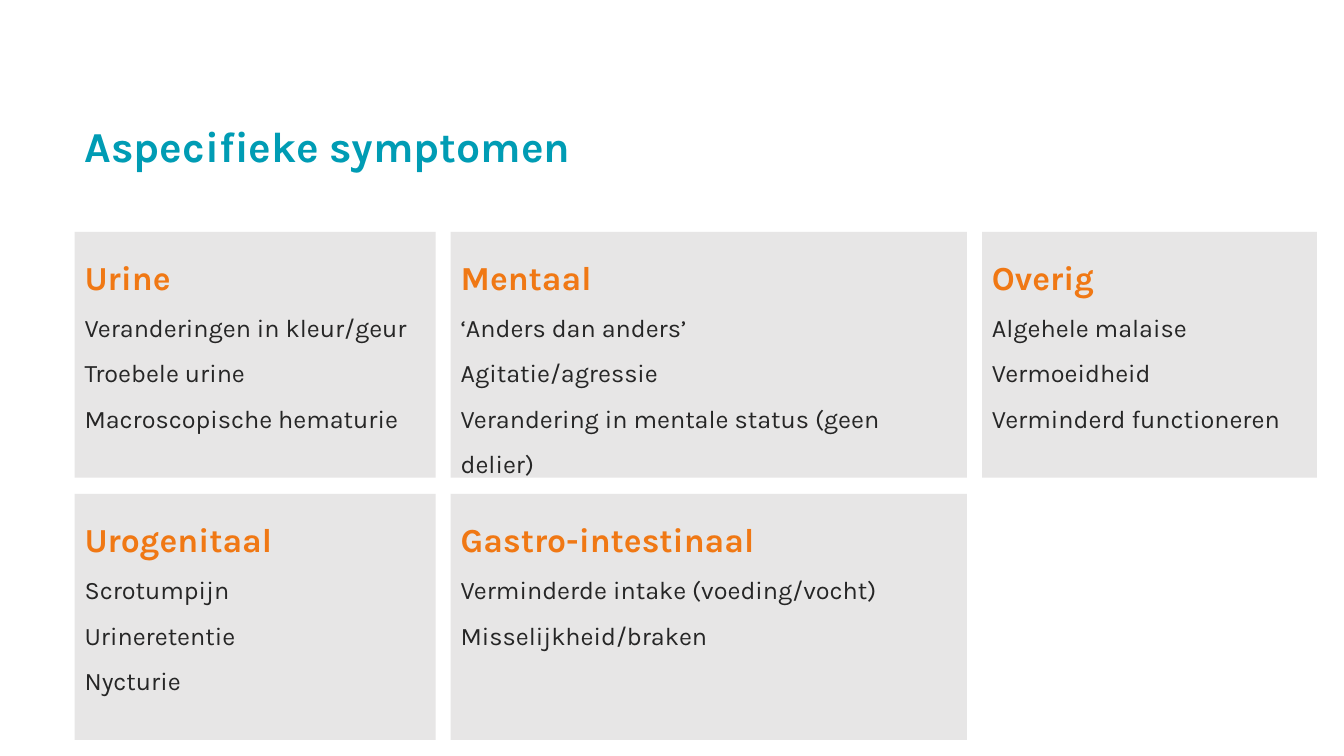
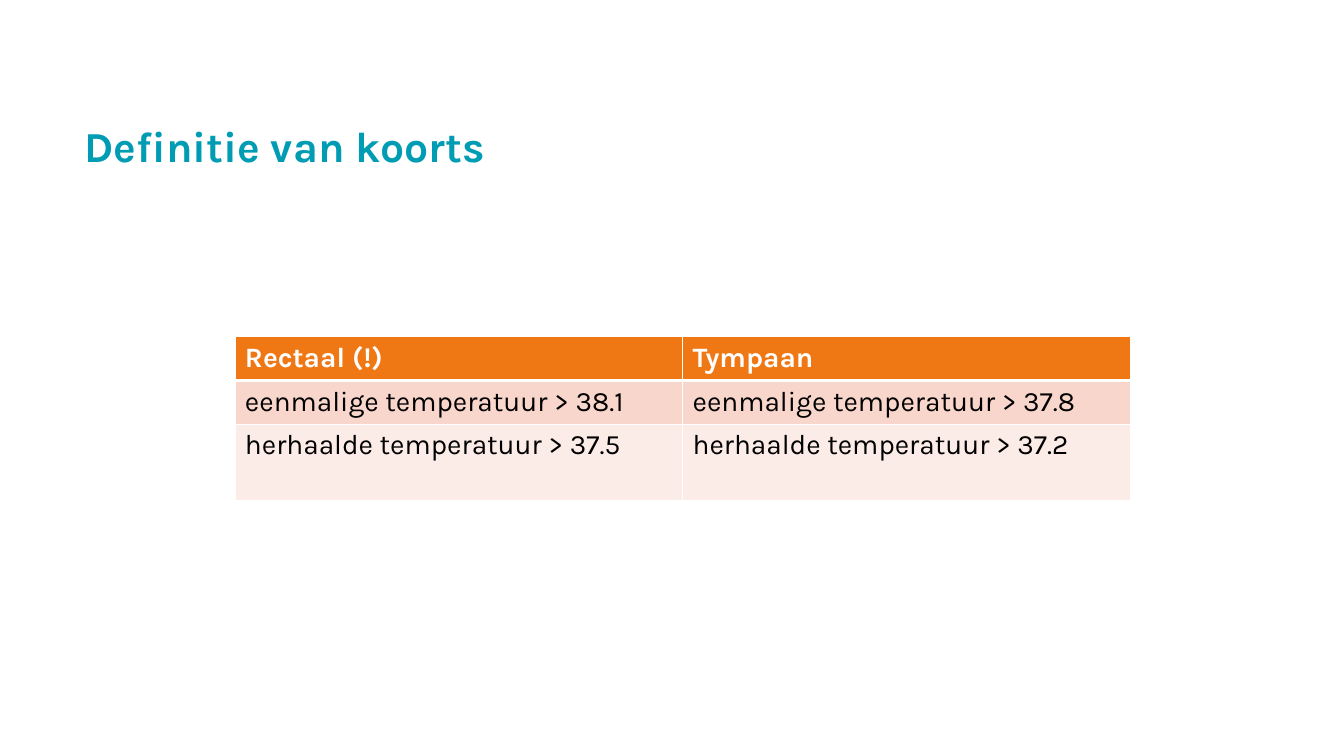
from lxml import etree
from pptx import Presentation
from pptx.dml.color import RGBColor
from pptx.enum.shapes import MSO_SHAPE
from pptx.enum.text import MSO_ANCHOR, PP_ALIGN
from pptx.oxml.ns import qn
from pptx.util import Inches, Pt

RECT = MSO_SHAPE.RECTANGLE
TOP = MSO_ANCHOR.TOP
LEFT = PP_ALIGN.LEFT

FONT = "Karla"
COLORS = {
    "title": "009CB4",
    "accent": "F07814",
    "body": "262626",
    "card": "E7E6E6",
    "band1": "F9D6CC",
    "band2": "FCECE7",
    "white": "FFFFFF",
    "black": "000000",
}
# Text styles: font attributes and colour
STYLES = {
    "title": ({"name": FONT, "size": Pt(30.5), "bold": True}, "title"),
    "heading": ({"name": FONT, "size": Pt(24), "bold": True}, "accent"),
    "item": ({"name": FONT, "size": Pt(18), "bold": False}, "body"),
    "header_cell": ({"name": FONT, "size": Pt(20), "bold": True}, "white"),
    "cell": ({"name": FONT, "size": Pt(20), "bold": False}, "black"),
}
MARGIN = 0.74


def write(tf, lines, spacing=1.0):
    """Fill a text frame with (text, style) paragraphs."""
    tf.word_wrap = True
    tf.vertical_anchor = TOP
    for i, (text, style) in enumerate(lines):
        p = tf.paragraphs[0] if i == 0 else tf.add_paragraph()
        p.alignment = LEFT
        p.line_spacing = spacing
        r = p.add_run()
        r.text = text
        attrs, color = STYLES[style]
        for name, value in attrs.items():
            setattr(r.font, name, value)
        r.font.color.rgb = RGBColor.from_string(COLORS[color])


def titled_slide(prs, title):
    """Add a blank slide with the shared title."""
    s = prs.slides.add_slide(prs.slide_layouts[6])
    box = s.shapes.add_textbox(Inches(MARGIN), Inches(1.2), Inches(12.33), Inches(1.45))
    write(box.text_frame, [(title, "title")], 0.9)
    return s


prs = Presentation()
prs.slide_width, prs.slide_height = Inches(13.33), Inches(7.5)

# Slide 1: cards with symptoms, column by column
s = titled_slide(prs, "Aspecifieke symptomen")
COLUMNS = [
    (3.58, [
        ("Urine", ["Veranderingen in kleur/geur", "Troebele urine", "Macroscopische hematurie"]),
        ("Urogenitaal", ["Scrotumpijn", "Urineretentie", "Nycturie"]),
    ]),
    (5.12, [
        ("Mentaal", ["‘Anders dan anders’", "Agitatie/agressie",
                     "Verandering in mentale status (geen delier)"]),
        ("Gastro-intestinaal", ["Verminderde intake (voeding/vocht)", "Misselijkheid/braken"]),
    ]),
    (3.32, [
        ("Overig", ["Algehele malaise", "Vermoeidheid", "Verminderd functioneren"]),
    ]),
]
CARD_TOP, CARD_HEIGHT, ROW_PITCH, COLUMN_GAP = 2.3, 2.44, 2.6, 0.15
left = MARGIN
for width, cards in COLUMNS:
    for row, (heading, items) in enumerate(cards):
        sp = s.shapes.add_shape(RECT, Inches(left), Inches(CARD_TOP + row * ROW_PITCH),
                                Inches(width), Inches(CARD_HEIGHT))
        sp.shadow.inherit = False
        sp.fill.solid()
        sp.fill.fore_color.rgb = RGBColor.from_string(COLORS["card"])
        sp.line.fill.background()
        write(sp.text_frame, [(heading, "heading")] + [(item, "item") for item in items], 1.5)
    left += width + COLUMN_GAP

# Slide 2: table with fever thresholds
s = titled_slide(prs, "Definitie van koorts")
ROWS = [
    (0.42, "accent", "header_cell", ["Rectaal (!)", "Tympaan"]),
    (0.42, "band1", "cell", ["eenmalige temperatuur > 38.1", "eenmalige temperatuur > 37.8"]),
    (0.76, "band2", "cell", ["herhaalde temperatuur > 37.5", "herhaalde temperatuur > 37.2"]),
]
table = s.shapes.add_table(len(ROWS), 2, Inches(2.33), Inches(3.34),
                           Inches(8.88), Inches(1.6)).table
for column in table.columns:
    column.width = Inches(4.44)
for i, (height, fill, style, texts) in enumerate(ROWS):
    table.rows[i].height = Inches(height)
    for j, text in enumerate(texts):
        cell = table.cell(i, j)
        write(cell.text_frame, [(text, style)])
        # White borders, thicker under the header row
        tcPr = cell._tc.get_or_add_tcPr()
        widths = {"lnL": 1, "lnR": 1, "lnT": 3 if i == 1 else 1, "lnB": 3 if i == 0 else 1}
        for side, points in widths.items():
            ln = etree.SubElement(tcPr, qn("a:" + side), w=str(Pt(points)))
            solid = etree.SubElement(ln, qn("a:solidFill"))
            etree.SubElement(solid, qn("a:srgbClr"), val=COLORS["white"])
        cell.fill.solid()
        cell.fill.fore_color.rgb = RGBColor.from_string(COLORS[fill])

prs.save("out.pptx")
